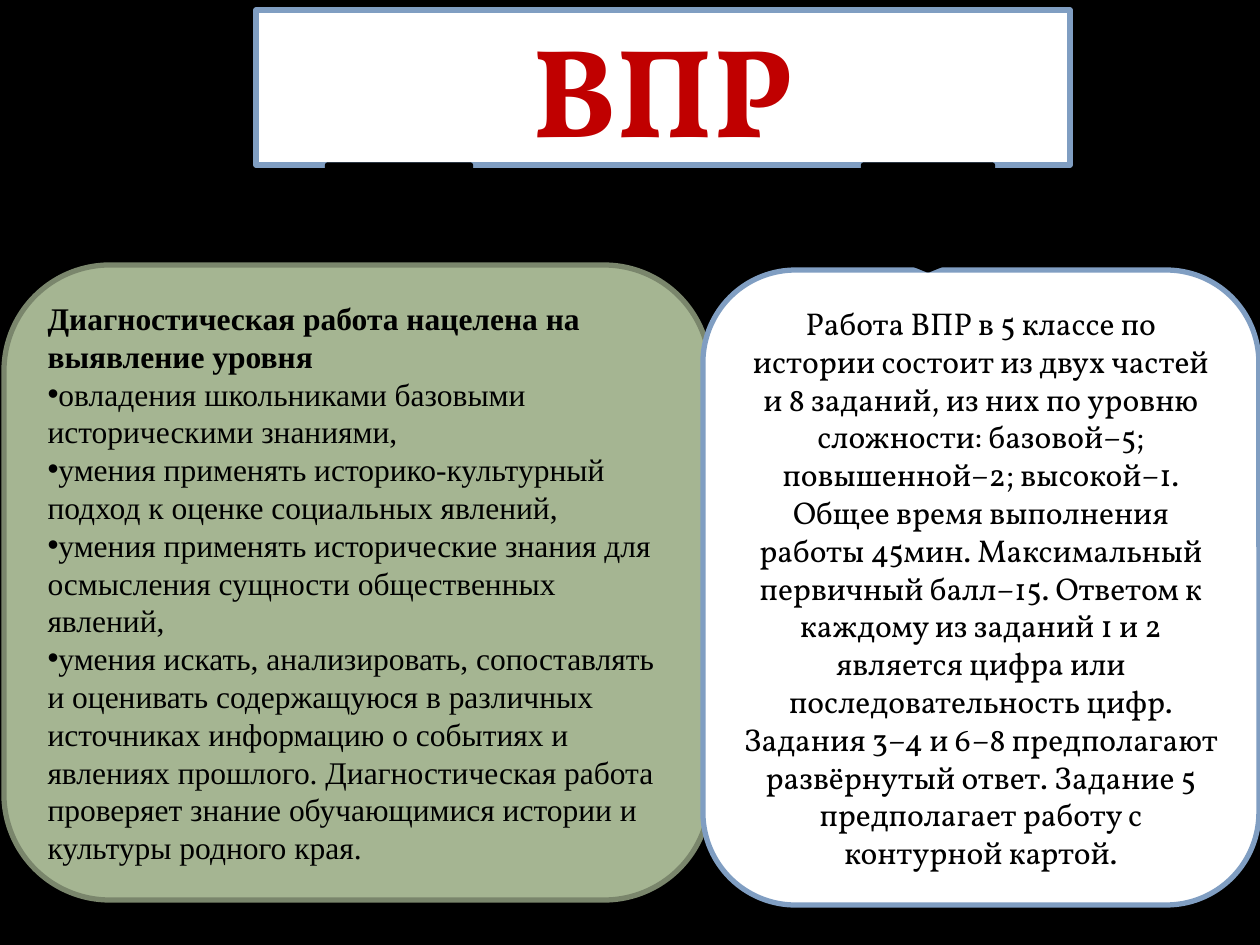
"""Build the slide that explains the ВПР history test."""
from dataclasses import dataclass

import lxml.etree
import pptx
import pptx.dml.color
import pptx.enum.shapes
import pptx.enum.text
import pptx.oxml.ns
import pptx.util

PX = 914400 // 126
SHAPE = pptx.enum.shapes.MSO_SHAPE
ALIGN = pptx.enum.text.PP_ALIGN
qn = pptx.oxml.ns.qn


@dataclass(frozen=True)
class Theme:
    black: str = "000000"
    white: str = "FFFFFF"
    red: str = "C00000"
    green: str = "A5B592"
    green_edge: str = "7A866C"
    blue_edge: str = "809EC2"
    serif: str = "Times New Roman"
    display: str = "Vollkorn"
    title_pt: int = 72
    text_pt: int = 18
    line_pt: int = 3


@dataclass(frozen=True)
class Box:
    x: int
    y: int
    w: int
    h: int
    fill: str
    edge: str


THEME = Theme()
TITLE = Box(256, 10, 814, 155, THEME.white, THEME.blue_edge)
GOALS = Box(4, 265, 706, 635, THEME.green, THEME.green_edge)
FORMAT = Box(703, 270, 556, 635, THEME.white, THEME.blue_edge)
LEFT_ARROW = Box(256, 165, 286, 100, THEME.black, THEME.black)
RIGHT_ARROW = Box(799, 165, 258, 105, THEME.black, THEME.black)

GOALS_HEADING = "Диагностическая работа нацелена на выявление уровня"
GOALS_ITEMS = (
    "овладения школьниками базовыми историческими знаниями,",
    "умения применять историко-культурный подход к оценке социальных явлений,",
    "умения применять исторические знания для осмысления сущности общественных явлений,",
    "умения искать, анализировать, сопоставлять и оценивать содержащуюся в различных "
    "источниках информацию о событиях и явлениях прошлого. Диагностическая работа "
    "проверяет знание обучающимися истории и культуры родного края.",
)
FORMAT_TEXT = (
    "Работа ВПР в 5 классе по истории состоит из двух частей и 8 заданий, из них по "
    "уровню сложности: базовой–5; повышенной–2; высокой–1. Общее время выполнения "
    "работы 45мин. Максимальный первичный балл–15. Ответом к каждому из заданий 1 и 2 "
    "является цифра или последовательность цифр. Задания 3–4 и 6–8 предполагают "
    "развёрнутый ответ. Задание 5 предполагает работу с контурной картой."
)


def rgb(value: str) -> pptx.dml.color.RGBColor:
    """Turn a hex string into a colour."""
    return pptx.dml.color.RGBColor.from_string(value)


def style(sp, box: Box) -> None:
    """Give a shape its fill, edge and text frame settings."""
    sp.shadow.inherit = False
    sp.fill.solid()
    sp.fill.fore_color.rgb = rgb(box.fill)
    sp.line.color.rgb = rgb(box.edge)
    sp.line.width = pptx.util.Pt(THEME.line_pt)
    tf = sp.text_frame
    tf.word_wrap = True
    tf.auto_size = pptx.enum.text.MSO_AUTO_SIZE.NONE
    tf.vertical_anchor = pptx.enum.text.MSO_ANCHOR.MIDDLE


def add_box(s, box: Box, shape: SHAPE):
    """Add a styled preset shape."""
    sp = s.shapes.add_shape(shape, box.x * PX, box.y * PX, box.w * PX, box.h * PX)
    style(sp, box)
    return sp


def place_rounded(s, sp, box: Box):
    """Move a placeholder to the front as a styled rounded rectangle."""
    sp.left, sp.top, sp.width, sp.height = (n * PX for n in (box.x, box.y, box.w, box.h))
    geom = lxml.etree.SubElement(sp._element.spPr, qn("a:prstGeom"), prst="roundRect")
    lxml.etree.SubElement(geom, qn("a:avLst"))
    style(sp, box)
    s.shapes._spTree.append(sp._element)
    return sp


def write(p, text: str, *, font: str = THEME.serif, size: int = THEME.text_pt,
          color: str = THEME.black, bold: bool = False,
          align: ALIGN = ALIGN.LEFT, bullet: bool = False) -> None:
    """Write one formatted paragraph."""
    p.alignment = align
    p.space_before = pptx.util.Pt(0)
    pPr = p._p.get_or_add_pPr()
    pPr.set("marL", "0")
    pPr.set("indent", "0")
    if bullet:
        lxml.etree.SubElement(pPr, qn("a:buChar"), char="•")
    else:
        lxml.etree.SubElement(pPr, qn("a:buNone"))
    r = p.add_run()
    r.text = text
    r.font.name = font
    r.font.size = pptx.util.Pt(size)
    r.font.color.rgb = rgb(color)
    r.font.bold = bold


def main() -> None:
    """Build and save the slide."""
    prs = pptx.Presentation()
    prs.slide_width = pptx.util.Inches(10)
    prs.slide_height = pptx.util.Inches(7.5)
    s = prs.slides.add_slide(prs.slide_layouts[1])
    s.background.fill.solid()
    s.background.fill.fore_color.rgb = rgb(THEME.black)

    title = place_rounded(s, s.shapes.title, TITLE)
    write(title.text_frame.paragraphs[0], "ВПР", font=THEME.display,
          size=THEME.title_pt, color=THEME.red, bold=True, align=ALIGN.CENTER)

    add_box(s, LEFT_ARROW, SHAPE.DOWN_ARROW)
    tf = place_rounded(s, s.placeholders[1], GOALS).text_frame
    write(tf.paragraphs[0], GOALS_HEADING, bold=True)
    for item in GOALS_ITEMS:
        write(tf.add_paragraph(), item, bullet=True)

    panel = add_box(s, FORMAT, SHAPE.ROUNDED_RECTANGLE)
    write(panel.text_frame.paragraphs[0], FORMAT_TEXT,
          font=THEME.display, align=ALIGN.CENTER)
    add_box(s, RIGHT_ARROW, SHAPE.DOWN_ARROW)

    prs.save("out.pptx")


if __name__ == "__main__":
    main()
